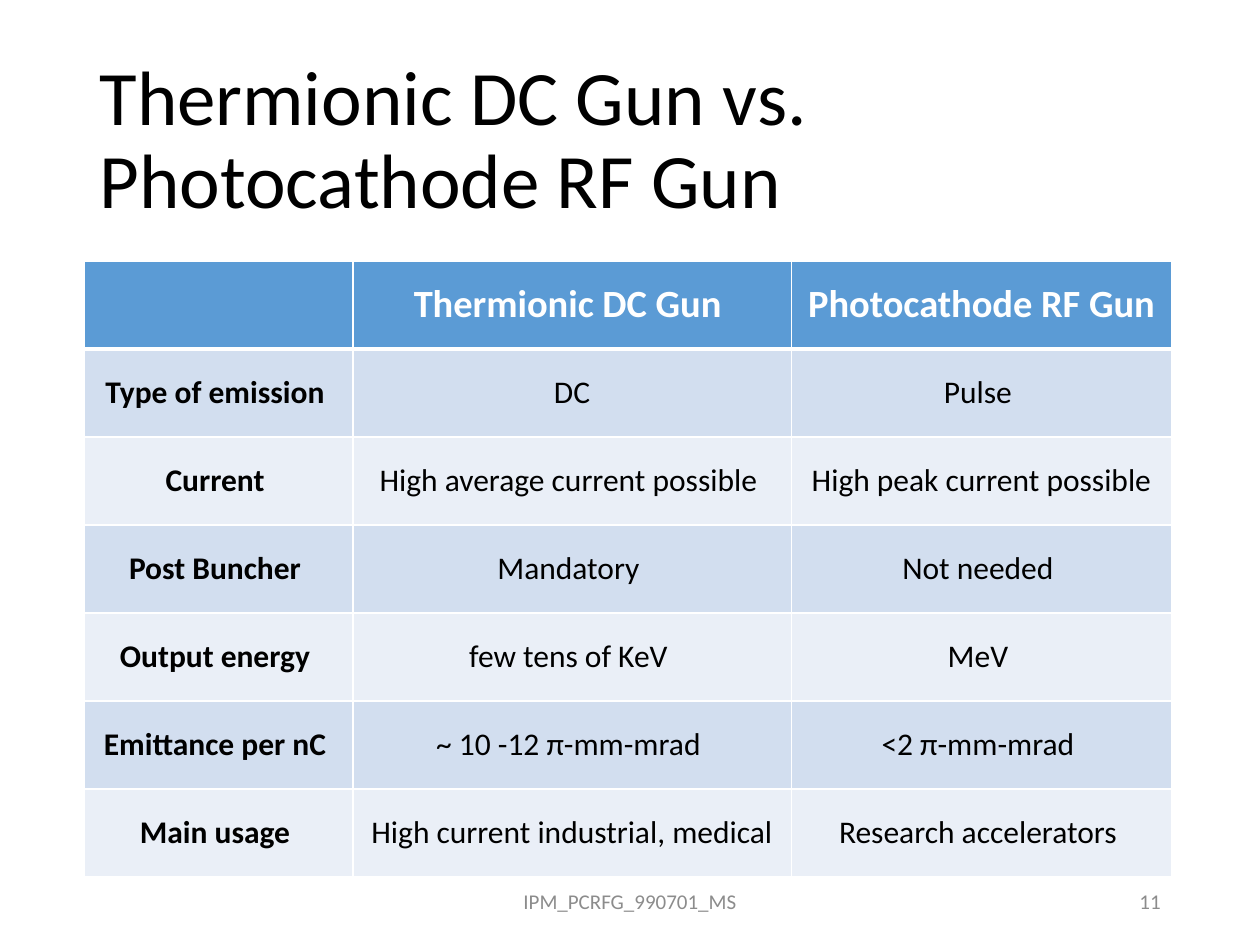
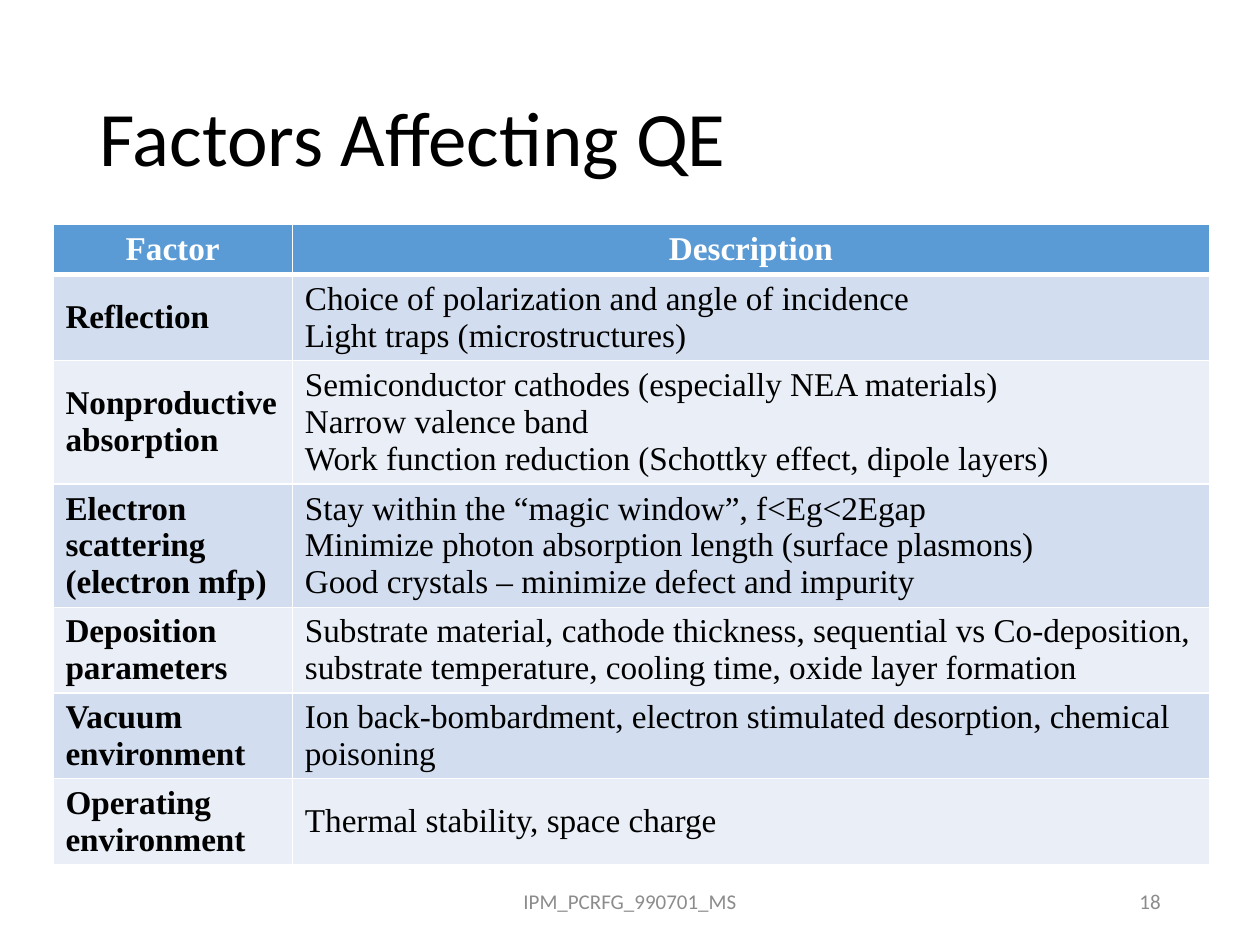
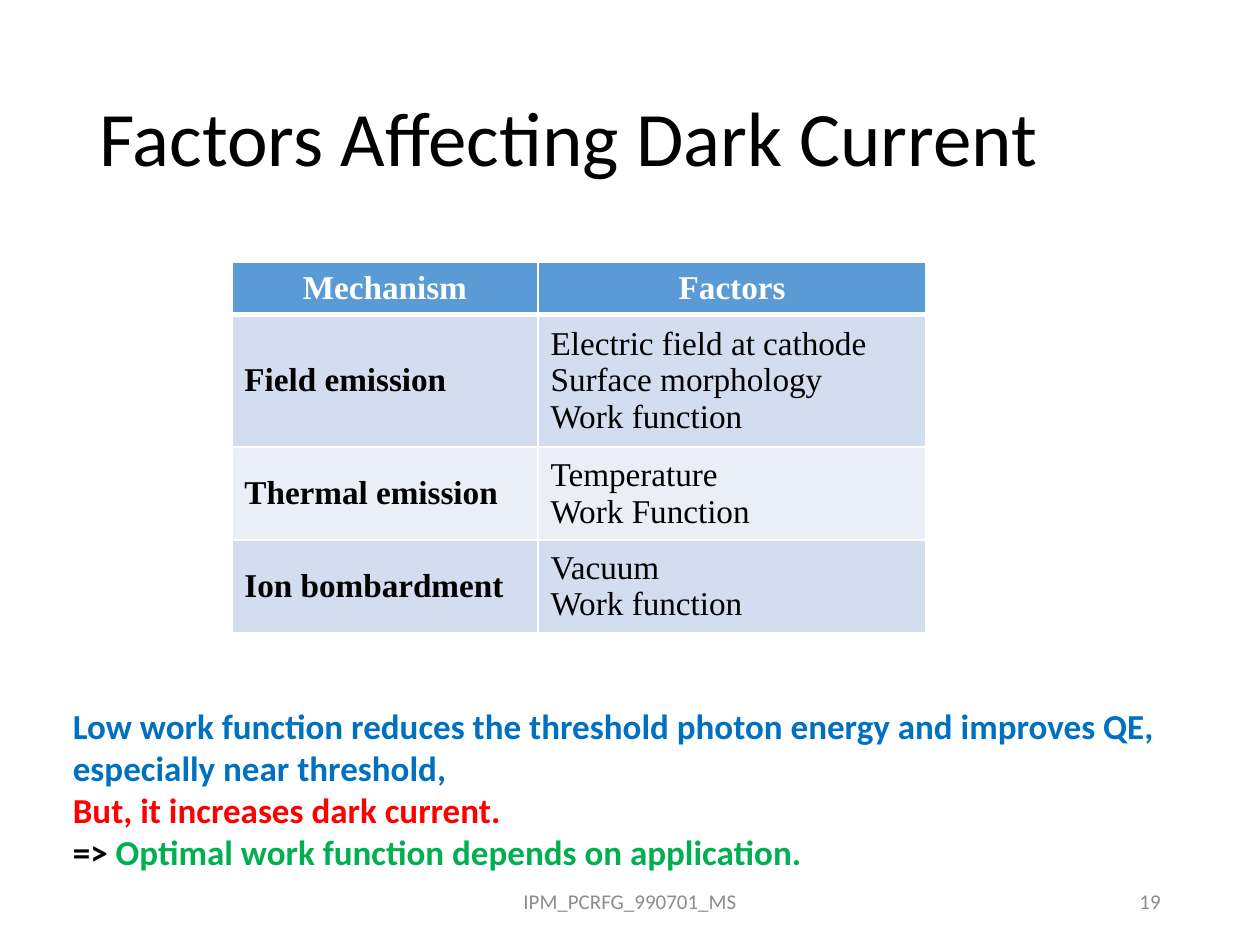
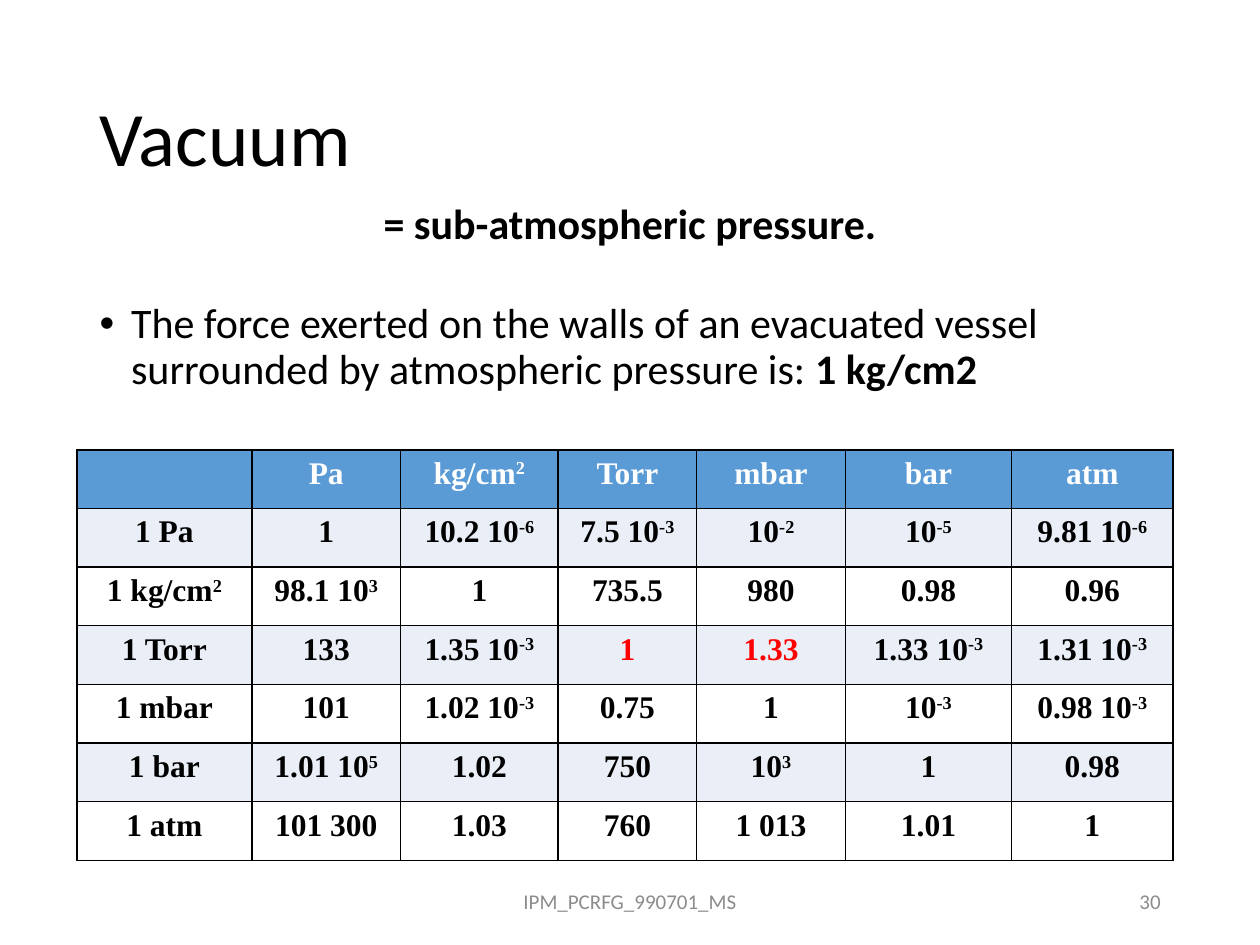
from lxml import etree
from pptx import Presentation
from pptx.dml.color import RGBColor
from pptx.enum.text import MSO_ANCHOR, PP_ALIGN
from pptx.oxml import parse_xml
from pptx.oxml.ns import nsdecls, qn
from pptx.util import Inches, Pt

COLORS = {
    "black": "000000", "white": "FFFFFF", "header": "5B9BD5",
    "band": "D2DEEF", "light": "EAEFF7", "footer": "8C8C8C",
    "blue": "0070C0", "red": "FF0000", "green": "00B050",
}
SANS, SERIF = "Calibri", "Times New Roman"
LEFT, CENTER, RIGHT = PP_ALIGN.LEFT, PP_ALIGN.CENTER, PP_ALIGN.RIGHT
FOOTER = "IPM_PCRFG_990701_MS"
TITLE_ONLY, TITLE_BODY = 5, 1


def rgb(name):
    return RGBColor.from_string(COLORS[name])


class Deck:
    def __init__(self):
        self.prs = Presentation()
        self.prs.slide_width = Inches(10)
        self.prs.slide_height = Inches(7.5)
        self.slide = None

    def add_slide(self, title, number, layout=TITLE_ONLY):
        self.slide = self.prs.slides.add_slide(self.prs.slide_layouts[layout])
        sp = self.slide.shapes.title
        self.place(sp, 0.69, 0.4, 8.62, 1.45)
        tf = sp.text_frame
        tf.vertical_anchor = MSO_ANCHOR.MIDDLE
        p = tf.paragraphs[0]
        p.alignment = LEFT
        p.line_spacing = 0.9
        self.run(p, title, 44)
        self.text(7.06, 6.95, 2.25, 0.4, [[(str(number), "footer", False)]],
                  12, RIGHT, MSO_ANCHOR.MIDDLE)
        self.text(3.31, 6.95, 3.38, 0.4, [[(FOOTER, "footer", False)]],
                  12, CENTER, MSO_ANCHOR.MIDDLE)

    def place(self, sp, x, y, w, h):
        sp.left, sp.top, sp.width, sp.height = map(Inches, (x, y, w, h))

    def run(self, p, text, size, color="black", bold=False, font=SANS):
        r = p.add_run()
        r.text = text
        r.font.size = Pt(size)
        r.font.name = font
        r.font.bold = bold
        r.font.color.rgb = rgb(color)
        return r

    def paragraphs(self, tf, count):
        for i in range(count):
            yield tf.add_paragraph() if i else tf.paragraphs[0]

    def text(self, x, y, w, h, lines, size, align=LEFT, anchor=MSO_ANCHOR.TOP):
        tf = self.slide.shapes.add_textbox(*map(Inches, (x, y, w, h))).text_frame
        tf.word_wrap = True
        tf.vertical_anchor = anchor
        for p, line in zip(self.paragraphs(tf, len(lines)), lines):
            p.alignment = align
            for text, color, bold in line:
                self.run(p, text, size, color, bold)

    def body(self, x, y, w, h, lead, bullet):
        sp = self.slide.placeholders[1]
        self.place(sp, x, y, w, h)
        first, second = self.paragraphs(sp.text_frame, 2)
        self.bullet(first, None, 0)
        self.bullet(second, "•", 0.25)
        first.alignment, second.alignment = CENTER, LEFT
        first.space_before, second.space_before = Pt(0), Pt(31)
        for p, runs in ((first, lead), (second, bullet)):
            p.line_spacing = 0.9
            for text, bold in runs:
                self.run(p, text, 24, bold=bold)

    def bullet(self, p, char, indent):
        pPr = p._p.get_or_add_pPr()
        pPr.set("marL", str(Inches(indent)))
        pPr.set("indent", str(-Inches(indent)))
        if char:
            etree.SubElement(pPr, qn("a:buFont")).set("typeface", "Arial")
            etree.SubElement(pPr, qn("a:buChar")).set("char", char)
        else:
            etree.SubElement(pPr, qn("a:buNone"))

    def borders(self, cell, color, top=1, bottom=1):
        tcPr = cell._tc.get_or_add_tcPr()
        for side, width in (("L", 1), ("R", 1), ("T", top), ("B", bottom)):
            tcPr.append(parse_xml(
                f'<a:ln{side} {nsdecls("a")} w="{Pt(width)}"><a:solidFill>'
                f'<a:srgbClr val="{COLORS[color]}"/></a:solidFill></a:ln{side}>'))

    def cell_text(self, cell, text, align, **style):
        lines = text.split("\n")
        for p, line in zip(self.paragraphs(cell.text_frame, len(lines)), lines):
            p.alignment = align
            base, _, power = line.partition("^")
            if base:
                self.run(p, base, **style)
            if power:
                r = self.run(p, power, **style)
                r._r.get_or_add_rPr().set("baseline", "30000")

    def table(self, x, y, cols, heights, rows, size, font, header_size=None,
              align=LEFT, anchor=MSO_ANCHOR.MIDDLE, bands=("band", "light"),
              line="white", rule=3, all_bold=False, red=(), pad=0.05):
        frame = self.slide.shapes.add_table(
            len(rows), len(cols),
            *map(Inches, (x, y, sum(cols), sum(heights))))
        table = frame.table
        for col, width in zip(table.columns, cols):
            col.width = Inches(width)
        for i, (row, height) in enumerate(zip(rows, heights)):
            table.rows[i].height = Inches(height)
            head = i == 0
            for j, text in enumerate(row):
                cell = table.cell(i, j)
                self.borders(cell, line, top=rule if i == 1 else 1,
                             bottom=rule if head else 1)
                cell.fill.solid()
                cell.fill.fore_color.rgb = rgb("header" if head else bands[(i - 1) % 2])
                cell.vertical_anchor = anchor
                cell.margin_top = cell.margin_bottom = Inches(pad)
                color = "white" if head else "red" if (i, j) in red else "black"
                self.cell_text(
                    cell, text, CENTER if head else align,
                    size=header_size if head and header_size else size,
                    color=color, bold=head or j == 0 or all_bold, font=font)


def gun_comparison(deck):
    deck.add_slide("Thermionic DC Gun vs. Photocathode RF Gun", 11)
    rows = [
        ("", "Thermionic DC Gun ", "Photocathode RF Gun "),
        ("Type of emission ", "DC", "Pulse "),
        ("Current ", "High average current possible ", "High peak current possible"),
        ("Post Buncher ", "Mandatory ", "Not needed "),
        ("Output energy ", "few tens of KeV ", "MeV "),
        ("Emittance per nC ", "~ 10 -12 π-mm-mrad ", "<2 π-mm-mrad "),
        ("Main usage ", "High current industrial, medical", "Research accelerators "),
    ]
    deck.table(0.67, 2.07, [2.13, 3.48, 3.02], [4.89 / len(rows)] * len(rows), rows,
               18, SANS, header_size=22, align=CENTER)


def qe_factors(deck):
    deck.add_slide("Factors Affecting QE", 18)
    rows = [
        ("Factor", "Description"),
        ("Reflection", "Choice of polarization and angle of incidence\n"
                       "Light traps (microstructures)"),
        ("Nonproductive absorption",
         "Semiconductor cathodes (especially NEA materials)\n"
         "Narrow valence band\n"
         "Work function reduction (Schottky effect, dipole layers)"),
        ("Electron scattering (electron mfp)",
         "Stay within the “magic window”, f<Eg<2Egap\n"
         "Minimize photon absorption length (surface plasmons)\n"
         "Good crystals – minimize defect and impurity"),
        ("Deposition parameters",
         "Substrate material, cathode thickness, sequential vs Co-deposition,\n"
         "substrate temperature, cooling time, oxide layer formation"),
        ("Vacuum environment",
         "Ion back-bombardment, electron stimulated desorption, chemical poisoning"),
        ("Operating environment", "Thermal stability, space charge"),
    ]
    deck.table(0.42, 1.78, [1.9, 7.28],
               [0.4, 0.68, 0.98, 0.98, 0.68, 0.68, 0.68], rows, 19, SERIF, pad=0.01)


def dark_current_factors(deck):
    deck.add_slide("Factors Affecting Dark Current", 19)
    deck.text(0.48, 5.54, 8.99, 1.45, [
        [("Low work function reduces the threshold photon energy and improves QE, "
          "especially near threshold,", "blue", True)],
        [("But, it increases dark current.", "red", True)],
        [("=> ", "black", True),
         ("Optimal work function depends on application.", "green", True)],
    ], 20)
    rows = [
        ("Mechanism", "Factors"),
        ("Field emission", "Electric field at cathode\nSurface morphology\nWork function"),
        ("Thermal emission", "Temperature\nWork Function"),
        ("Ion bombardment", "Vacuum\nWork function"),
    ]
    deck.table(1.84, 2.08, [2.43, 3.08], [0.41, 1.05, 0.74, 0.73], rows, 19, SERIF)


def vacuum_units(deck):
    deck.add_slide("Vacuum", 30, TITLE_BODY)
    deck.body(0.69, 1.56, 8.62, 4.76,
              [("= sub-atmospheric pressure.", True)],
              [("The force exerted on the walls of an evacuated vessel surrounded "
                "by atmospheric pressure is: ", False), ("1 kg/cm2", True)])
    rows = [
        ("", "Pa", "kg/cm^2", "Torr", "mbar", "bar", "atm"),
        ("1 Pa", "1", "10.2 10^-6", "7.5 10^-3", "10^-2", "10^-5", "9.81 10^-6"),
        ("1 kg/cm^2", "98.1 10^3", "1", "735.5", "980", "0.98", "0.96"),
        ("1 Torr", "133", "1.35 10^-3", "1", "1.33", "1.33 10^-3", "1.31 10^-3"),
        ("1 mbar", "101", "1.02 10^-3", "0.75", "1", "10^-3", "0.98 10^-3"),
        ("1 bar", "1.01 10^5", "1.02", "750", "10^3", "1", "0.98"),
        ("1 atm", "101 300", "1.03", "760", "1 013", "1.01", "1"),
    ]
    deck.table(0.61, 3.57, [1.39, 1.18, 1.25, 1.1, 1.18, 1.32, 1.28],
               [3.26 / len(rows)] * len(rows), rows, 18, SERIF, align=CENTER,
               anchor=MSO_ANCHOR.TOP, bands=("light", "white"), line="black",
               rule=1, all_bold=True, red={(3, 3), (3, 4)})


def main():
    deck = Deck()
    for build in (gun_comparison, qe_factors, dark_current_factors, vacuum_units):
        build(deck)
    deck.prs.save("out.pptx")


if __name__ == "__main__":
    main()
